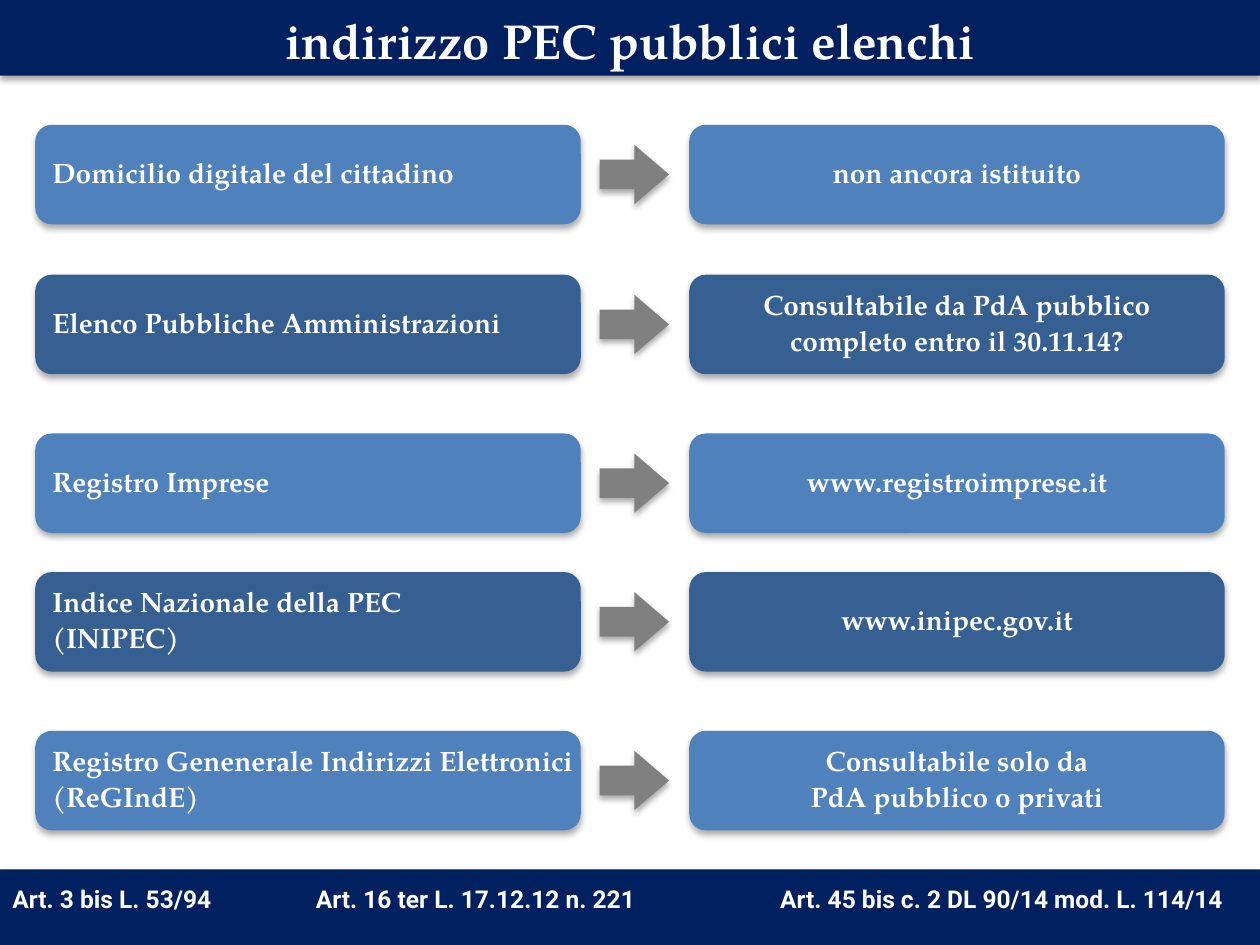
from lxml.etree import SubElement
from pptx import Presentation
from pptx.dml.color import RGBColor
from pptx.enum.shapes import MSO_SHAPE
from pptx.enum.text import MSO_ANCHOR, PP_ALIGN
from pptx.oxml.ns import qn
from pptx.util import Inches, Pt

COLUMNS, ROWS, CELL = 100, 75, 0.1
SERIF, SANS = "TeX Gyre Pagella", "Roboto"
NAVY, LIGHT_BLUE, DARK_BLUE, GREY = "002060", "4F81BD", "376092", "808080"
BAR_SHADOW = {"alpha": 35, "blur": 3.1, "distance": 1.8}
CARD_SHADOW = {"alpha": 32, "blur": 3.5, "distance": 2.2}
CARD_HEIGHT = 7.9
LEFT_CARD, ARROW, RIGHT_CARD = (2.8, 43.3), (47.6, 5.5), (54.7, 42.5)
ARROW_HEIGHT = 4.7

REGISTERS = [
    (9.9, ["Domicilio digitale del cittadino"], ["non ancora istituito"]),
    (21.8, ["Elenco Pubbliche Amministrazioni"],
     ["Consultabile da PdA pubblico", "completo entro il 30.11.14?"]),
    (34.4, ["Registro Imprese"], ["www.registroimprese.it"]),
    (45.4, ["Indice Nazionale della PEC", "(INIPEC)"], ["www.inipec.gov.it"]),
    (58, ["Registro Genenerale Indirizzi Elettronici", "(ReGIndE)"],
     ["Consultabile solo da", "PdA pubblico o privati"]),
]
REFERENCES = ["Art. 3 bis L. 53/94 ", " Art. 16 ter L. 17.12.12 n. 221 ",
              "Art. 45 bis c. 2 DL 90/14 mod. L. 114/14"]
REFERENCE_TABS = [(2.36, "l"), (9.61, "r")]


def grid(cells):
    """Turn a number of grid cells into a length."""
    return Inches(cells * CELL)


def color(hex_code):
    """Turn a hex string into a colour."""
    return RGBColor.from_string(hex_code)


def add_shadow(shape, alpha, blur, distance):
    """Give a shape a soft black shadow that falls straight down."""
    shape.shadow.inherit = False
    effects = shape._element.spPr.find(qn("a:effectLst"))
    outer = SubElement(effects, qn("a:outerShdw"), blurRad=str(Pt(blur)),
                       dist=str(Pt(distance)), dir="5400000", rotWithShape="0")
    black = SubElement(outer, qn("a:srgbClr"), val="000000")
    SubElement(black, qn("a:alpha"), val=str(alpha * 1000))


def add_block(page, kind, box, fill, shadow, adjustments=()):
    """Draw a filled, shadowed shape in a grid box."""
    shape = page.shapes.add_shape(kind, *map(grid, box))
    shape.fill.solid()
    shape.fill.fore_color.rgb = color(fill)
    shape.line.fill.background()
    add_shadow(shape, **shadow)
    for index, value in enumerate(adjustments):
        shape.adjustments[index] = value
    return shape


def write(shape, lines, size=16, font=SERIF, align=PP_ALIGN.CENTER,
          anchor=MSO_ANCHOR.MIDDLE, wrap=True, spacing=1.0, before=0):
    """Write bold white lines into a shape, one paragraph each."""
    frame = shape.text_frame
    frame.word_wrap = wrap
    frame.vertical_anchor = anchor
    for index, line in enumerate(lines):
        para = frame.add_paragraph() if index else frame.paragraphs[0]
        para.alignment = align
        para.line_spacing = spacing
        para.space_before = Pt(before)
        span = para.add_run()
        span.text = line
        span.font.name, span.font.size, span.font.bold = font, Pt(size), True
        span.font.color.rgb = color("FFFFFF")
    return frame


def add_header(page, box):
    """Place the title bar."""
    bar = add_block(page, MSO_SHAPE.RECTANGLE, box, NAVY, BAR_SHADOW)
    write(bar, ["indirizzo PEC pubblici elenchi"], size=28, anchor=MSO_ANCHOR.BOTTOM)


def add_footer(page, box):
    """Place the bar of legal references, set out by tab stops."""
    bar = add_block(page, MSO_SHAPE.RECTANGLE, box, NAVY, BAR_SHADOW)
    frame = write(bar, ["\t".join(REFERENCES)], size=14, font=SANS,
                  align=PP_ALIGN.LEFT, anchor=MSO_ANCHOR.BOTTOM, spacing=0.9)
    frame.margin_bottom = grid(2.5)
    tabs = SubElement(frame.paragraphs[0]._p.get_or_add_pPr(), qn("a:tabLst"))
    for position, side in REFERENCE_TABS:
        SubElement(tabs, qn("a:tab"), pos=str(Inches(position)), algn=side)


def add_card(page, box, fill, lines, align):
    """Place a rounded card with its text."""
    card = add_block(page, MSO_SHAPE.ROUNDED_RECTANGLE, box, fill, CARD_SHADOW, [0.167])
    write(card, lines, align=align, wrap=False, spacing=0.9, before=3.2)


def add_register(page, top, fill, name, access):
    """Place one row: register, arrow and way of access."""
    for (left, width), lines, align in ((LEFT_CARD, name, PP_ALIGN.LEFT),
                                        (RIGHT_CARD, access, PP_ALIGN.CENTER)):
        add_card(page, (left, top, width, CARD_HEIGHT), fill, lines, align)
    left, width = ARROW
    arrow_top = top + (CARD_HEIGHT - ARROW_HEIGHT) / 2
    add_block(page, MSO_SHAPE.RIGHT_ARROW, (left, arrow_top, width, ARROW_HEIGHT),
              GREY, CARD_SHADOW, [0.5, 0.584])


def main():
    """Build the slide and save it."""
    deck = Presentation()
    deck.slide_width, deck.slide_height = grid(COLUMNS), grid(ROWS)
    page = deck.slides.add_slide(deck.slide_layouts[6])
    add_header(page, (0, 0, COLUMNS, 6))
    add_footer(page, (0, 69, COLUMNS, 6))
    for index, (top, name, access) in enumerate(REGISTERS):
        add_register(page, top, (LIGHT_BLUE, DARK_BLUE)[index % 2], name, access)
    deck.save("out.pptx")


if __name__ == "__main__":
    main()
